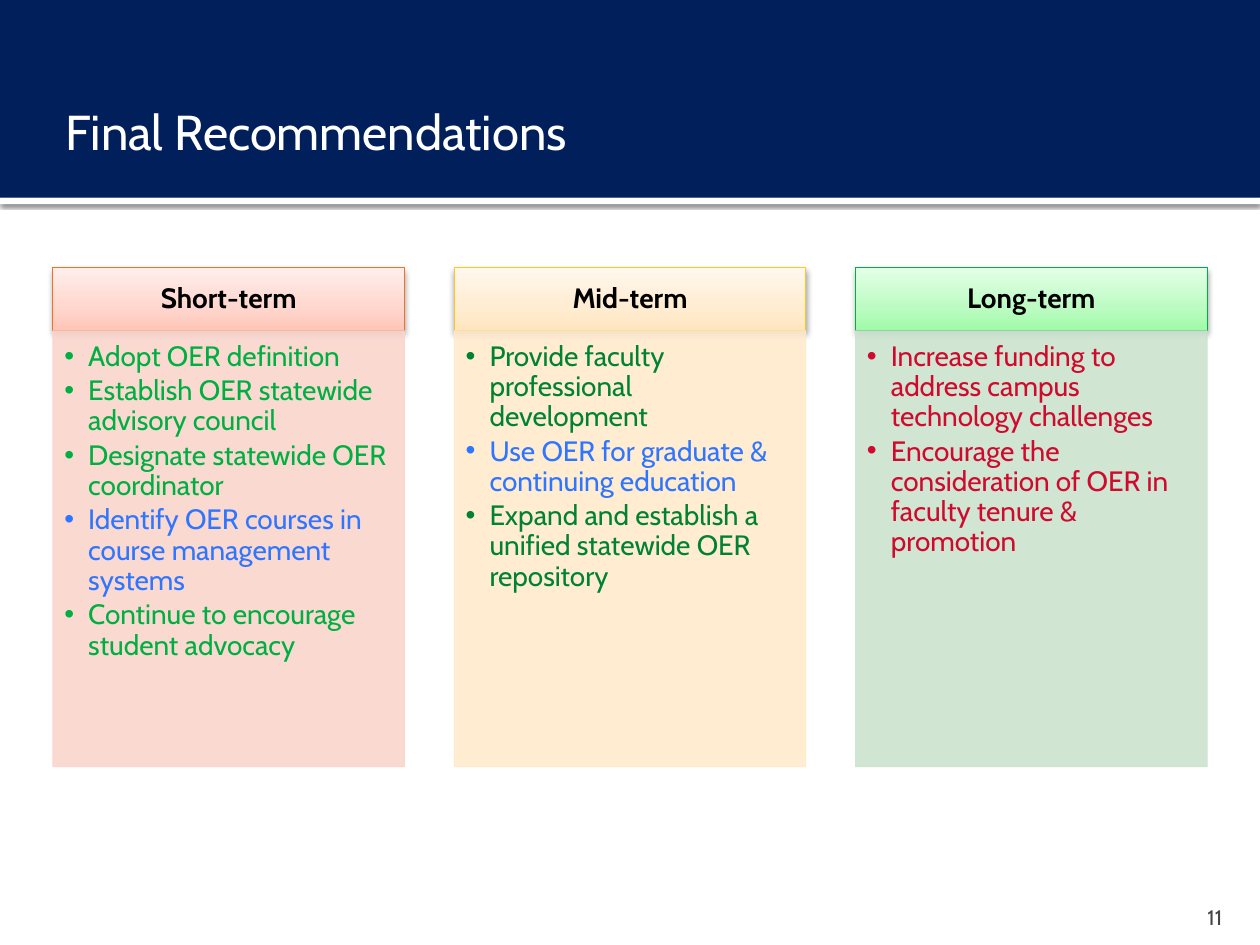
"""Build the Final Recommendations slide with three columns of actions by time horizon."""
from lxml import etree
from pptx import Presentation
from pptx import util as u
from pptx.dml.color import RGBColor
from pptx.enum import shapes, text
from pptx.oxml.ns import qn

FONT = "Cabin"
NAVY = RGBColor(0x00, 0x1F, 0x5B)
WHITE = RGBColor(0xFF, 0xFF, 0xFF)
BLACK = RGBColor(0x00, 0x00, 0x00)
GRAY = RGBColor(0x45, 0x45, 0x45)
GREEN = RGBColor(0x00, 0xAF, 0x41)
DARK_GREEN = RGBColor(0x00, 0x83, 0x31)
BLUE = RGBColor(0x2E, 0x75, 0xFF)
RED = RGBColor(0xCF, 0x0A, 0x2C)
ORANGE = RGBColor(0xF3, 0x71, 0x21)
GOLD = RGBColor(0xFF, 0xC6, 0x27)
PINK_TINT = RGBColor(0xFA, 0xD5, 0xCD)
CREAM_TINT = RGBColor(0xFF, 0xEA, 0xCD)
GREEN_TINT = RGBColor(0xCC, 0xE3, 0xCF)

COLUMNS = [
    {"head": "Short-term", "line": ORANGE, "tint": PINK_TINT,
     "gradient": ("FFC5B7", "FFD6CD", "FFEFEC"),
     "items": [
         ("Adopt OER definition", GREEN),
         ("Establish OER statewide advisory council", GREEN),
         ("Designate statewide OER coordinator", GREEN),
         ("Identify OER courses in course management systems", BLUE),
         ("Continue to encourage student advocacy", GREEN)]},
    {"head": "Mid-term", "line": GOLD, "tint": CREAM_TINT,
     "gradient": ("FFE5BE", "FFECD1", "FFF8EE"),
     "items": [
         ("Provide faculty professional development", DARK_GREEN),
         ("Use OER for graduate & continuing education", BLUE),
         ("Expand and establish a unified statewide OER repository", DARK_GREEN)]},
    {"head": "Long-term", "line": GREEN, "tint": GREEN_TINT,
     "gradient": ("9EFBA8", "BCFBC2", "E4FFE7"),
     "items": [
         ("Increase funding to address campus technology challenges", RED),
         ("Encourage the consideration of OER in faculty tenure & promotion", RED)]},
]
STOPS = (0, 35, 100)
LEFT, TOP, WIDTH, PITCH = 0.42, 2.12, 2.79, 3.185
HEAD_H, BODY_H = 0.505, 3.46


def sub(parent, tag, **attrs):
    return etree.SubElement(parent, qn(tag), {k: str(v) for k, v in attrs.items()})


def add_rect(s, x, y, w, h, fill=None, line=None):
    sp = s.shapes.add_shape(shapes.MSO_SHAPE.RECTANGLE, *map(u.Inches, (x, y, w, h)))
    sp.shadow.inherit = False
    if fill is not None:
        sp.fill.solid()
        sp.fill.fore_color.rgb = fill
    if line is None:
        sp.line.fill.background()
    else:
        sp.line.color.rgb = line
        sp.line.width = u.Pt(0.5)
    return sp


def add_shadow(sp, alpha, blur, dist):
    effects = sp._element.spPr.find(qn("a:effectLst"))
    shadow = sub(effects, "a:outerShdw", blurRad=u.Pt(blur), dist=u.Pt(dist),
                 dir=5400000, rotWithShape=0)
    sub(sub(shadow, "a:srgbClr", val="000000"), "a:alpha", val=alpha * 1000)


def set_gradient(sp, colors):
    sp.fill.gradient()
    sp.fill.gradient_angle = 90
    stops = sp._element.spPr.find(qn("a:gradFill")).find(qn("a:gsLst"))
    stops.clear()
    for pos, color in zip(STOPS, colors):
        sub(sub(stops, "a:gs", pos=pos * 1000), "a:srgbClr", val=color)


def set_frame(tf, anchor, margins):
    tf.word_wrap = True
    tf.auto_size = text.MSO_AUTO_SIZE.NONE
    tf.vertical_anchor = anchor
    tf.margin_left, tf.margin_top, tf.margin_right, tf.margin_bottom = map(u.Inches, margins)


def set_text(p, words, size, color, align=text.PP_ALIGN.LEFT, bold=False):
    p.text = words
    p.alignment = align
    p.font.name, p.font.size, p.font.bold = FONT, u.Pt(size), bold
    p.font.color.rgb = color


def add_column(s, x, col):
    head = add_rect(s, x, TOP, WIDTH, HEAD_H, line=col["line"])
    set_gradient(head, col["gradient"])
    add_shadow(head, 38, 3.5, 2)
    set_frame(head.text_frame, text.MSO_ANCHOR.MIDDLE, (0.12, 0.07, 0.12, 0.07))
    p = head.text_frame.paragraphs[0]
    set_text(p, col["head"], 16, BLACK, text.PP_ALIGN.CENTER, True)
    p.line_spacing = 0.9

    body = add_rect(s, x, TOP + HEAD_H, WIDTH, BODY_H, col["tint"], col["tint"])
    for color in body._element.spPr.iter(qn("a:srgbClr")):
        sub(color, "a:alpha", val=90000)
    tf = body.text_frame
    set_frame(tf, text.MSO_ANCHOR.TOP, (0.09, 0.09, 0.12, 0.14))
    for i, (words, color) in enumerate(col["items"]):
        p = tf.add_paragraph() if i else tf.paragraphs[0]
        pPr = p._p.get_or_add_pPr()
        pPr.set("marL", str(u.Inches(0.19)))
        pPr.set("indent", str(u.Inches(-0.19)))
        sub(pPr, "a:buFont", typeface="Arial")
        sub(pPr, "a:buChar", char="•")
        set_text(p, words, 16, color)
        p.line_spacing = 0.9
        p.space_after = u.Pt(2.4)


def main():
    prs = Presentation()
    prs.slide_width, prs.slide_height = u.Inches(10), u.Inches(7.5)
    s = prs.slides.add_slide(prs.slide_layouts[5])

    add_shadow(add_rect(s, 0, 1.57, 10, 0.05, WHITE), 60, 2.5, 0.8)
    add_rect(s, 0, 0, 10, 1.57, NAVY)

    title = s.shapes.title
    s.shapes._spTree.append(title._element)
    title.left, title.top, title.width, title.height = map(u.Inches, (0.42, 0.58, 9.17, 0.92))
    set_frame(title.text_frame, text.MSO_ANCHOR.MIDDLE, (0.1, 0.05, 0.05, 0.05))
    set_text(title.text_frame.paragraphs[0], "Final Recommendations", 28, WHITE)

    for i, col in enumerate(COLUMNS):
        add_column(s, LEFT + i * PITCH, col)

    number = s.shapes.add_textbox(*map(u.Inches, (9, 7.08, 0.8, 0.3)))
    set_frame(number.text_frame, text.MSO_ANCHOR.BOTTOM, (0.1, 0.05, 0.1, 0))
    set_text(number.text_frame.paragraphs[0], "11", 12, GRAY, text.PP_ALIGN.RIGHT)

    prs.save("out.pptx")


if __name__ == "__main__":
    main()
